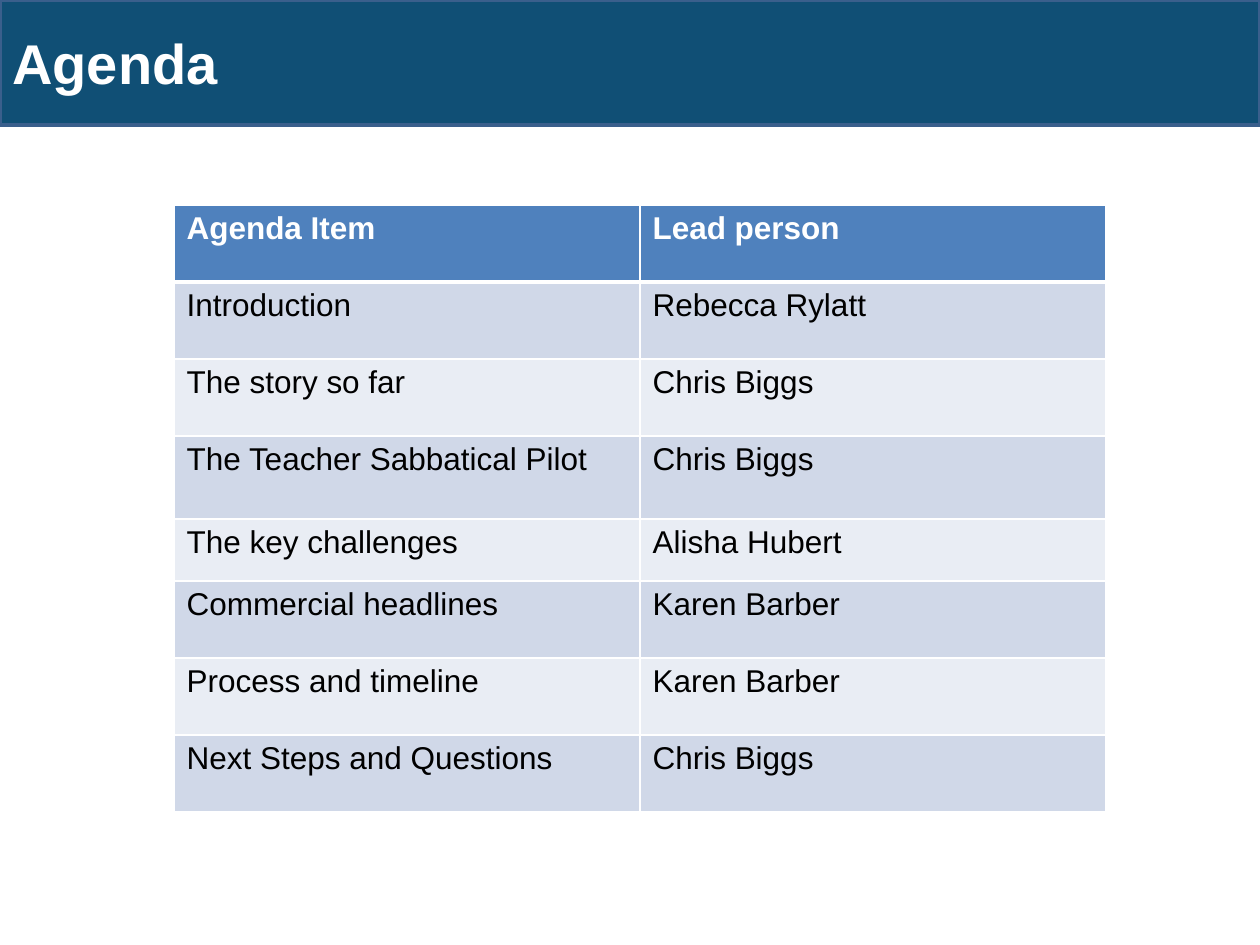
from lxml.etree import SubElement
from pptx import Presentation
from pptx.dml.color import RGBColor
from pptx.enum.shapes import MSO_SHAPE
from pptx.enum.text import MSO_ANCHOR, PP_ALIGN
from pptx.oxml.ns import qn
from pptx.util import Emu, Pt

THEME = {
    "font": "Arial",
    "title_size": 32,
    "table_size": 18,
    "white": "FFFFFF",
    "black": "000000",
    "banner": "104F75",
    "banner_line": "3A5F8C",
    "header": "4F81BD",
    "bands": ["E9EDF4", "D0D8E8"],
}
SCALE = 914400 / 126


def px(length):
    return Emu(round(length * SCALE))


def write(frame, text, size, color, bold):
    para = frame.paragraphs[0]
    para.alignment = PP_ALIGN.LEFT
    span = para.add_run()
    span.text = text
    span.font.name = THEME["font"]
    span.font.size = Pt(size)
    span.font.bold = bold
    span.font.color.rgb = RGBColor.from_string(THEME[color])


deck = Presentation()
deck.slide_width, deck.slide_height = px(1260), px(945)
page = deck.slides.add_slide(deck.slide_layouts[6])

agenda = [
    ("Agenda Item", "Lead person", 77),
    ("Introduction", "Rebecca Rylatt", 77),
    ("The story so far", "Chris Biggs", 77),
    ("The Teacher Sabbatical Pilot", "Chris Biggs", 83),
    ("The key challenges", "Alisha Hubert", 62),
    ("Commercial headlines", "Karen Barber", 77),
    ("Process and timeline", "Karen Barber", 77),
    ("Next Steps and Questions", "Chris Biggs", 77),
]
total_height = sum(height for item, lead, height in agenda)
table = page.shapes.add_table(
    len(agenda), 2, px(174), px(205), px(932), px(total_height)
).table
for column in table.columns:
    column.width = px(466)

for row, (item, lead, height) in enumerate(agenda):
    table.rows[row].height = px(height)
    is_header = row == 0
    fill = THEME["header"] if is_header else THEME["bands"][row % 2]
    for column, text in enumerate((item, lead)):
        cell = table.cell(row, column)
        properties = cell._tc.get_or_add_tcPr()
        for side in ("L", "R", "T", "B"):
            under_header = (row, side) in ((0, "B"), (1, "T"))
            width = Pt(3 if under_header else 1)
            border = SubElement(properties, qn(f"a:ln{side}"), w=str(width))
            solid = SubElement(border, qn("a:solidFill"))
            SubElement(solid, qn("a:srgbClr"), val=THEME["white"])
        cell.fill.solid()
        cell.fill.fore_color.rgb = RGBColor.from_string(fill)
        color = "white" if is_header else "black"
        write(cell.text_frame, text, THEME["table_size"], color, is_header)

banner = page.shapes.add_shape(MSO_SHAPE.RECTANGLE, 0, 0, px(1260), px(125))
banner.shadow.inherit = False
banner.fill.solid()
banner.fill.fore_color.rgb = RGBColor.from_string(THEME["banner"])
banner.line.color.rgb = RGBColor.from_string(THEME["banner_line"])
banner.line.width = Pt(2)
banner.text_frame.word_wrap = True
banner.text_frame.vertical_anchor = MSO_ANCHOR.MIDDLE
write(banner.text_frame, "Agenda", THEME["title_size"], "white", True)

deck.save("out.pptx")
